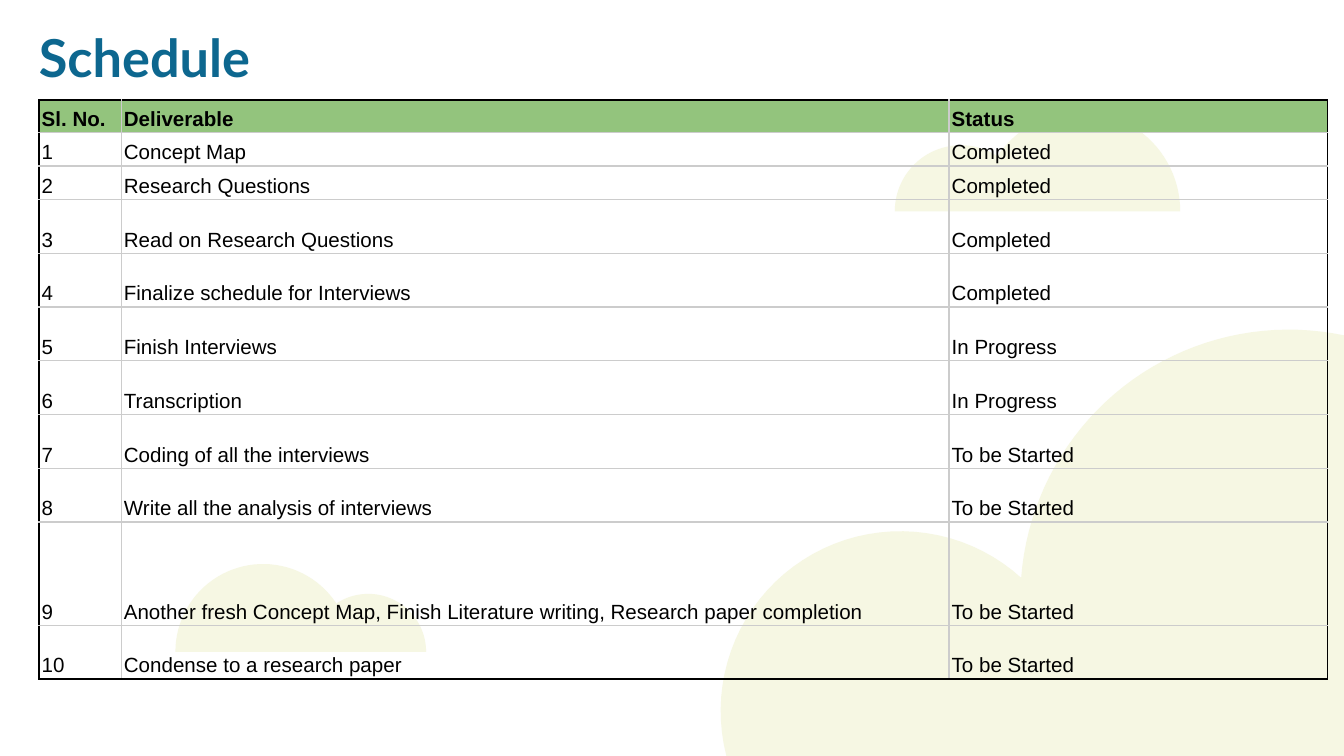
import math

import pptx
import pptx.dml.color
import pptx.enum.text
import pptx.oxml
import pptx.oxml.ns
import pptx.util

Pt = pptx.util.Pt
RGBColor = pptx.dml.color.RGBColor

BLUE = RGBColor(0x0D, 0x67, 0x8F)
GREEN = RGBColor(0x93, 0xC4, 0x7D)
CLOUD = RGBColor(0xF6, 0xF7, 0xE3)
BLACK = RGBColor(0x00, 0x00, 0x00)
GREY = RGBColor(0xCC, 0xCC, 0xCC)


def set_font(r, size, name, color, bold):
    for key, value in {"size": Pt(size), "name": name, "bold": bold}.items():
        setattr(r.font, key, value)
    r.font.color.rgb = color


def add_border(cell, side, color):
    ns = pptx.oxml.ns.nsdecls("a")
    cell._tc.get_or_add_tcPr().append(pptx.oxml.parse_xml(
        f'<a:ln{side} {ns} w="{Pt(0.75)}"><a:solidFill>'
        f'<a:srgbClr val="{color}"/></a:solidFill></a:ln{side}>'))


prs = pptx.Presentation()
prs.slide_width, prs.slide_height = Pt(720), Pt(405)
s = prs.slides.add_slide(prs.slide_layouts[6])

# Clouds: arcs (centre x, centre y, radius, start and end angle), then corners
clouds = [
    ([(514.8, 113.2, 35.4, 180, 56), (578.9, 113.2, 53.4, 146, 0)], []),
    ([(141, 349.2, 47, 180, 34), (197.3, 349.2, 31, 124, 0)], []),
    ([(482.4, 380.9, 96.3, 198, 47.7), (690.5, 320.4, 143.8, 175.7, 75.5)],
     [(726.5, 410.4)]),
]
STEPS = 40
for arcs, corners in clouds:
    points = []
    for cx, cy, radius, start, end in arcs:
        for i in range(STEPS + 1):
            a = math.radians(start + (end - start) * i / STEPS)
            points.append((cx + radius * math.cos(a), cy - radius * math.sin(a)))
    outline = [(Pt(x), Pt(y)) for x, y in points + corners]
    builder = s.shapes.build_freeform(*outline[0], scale=1.0)
    builder.add_line_segments(outline[1:], close=True)
    sp = builder.convert_to_shape()
    sp.shadow.inherit = False
    sp.fill.solid()
    sp.fill.fore_color.rgb = CLOUD
    sp.line.fill.background()

# Title
tf = s.shapes.add_textbox(Pt(20.9), Pt(13.7), Pt(429), Pt(66)).text_frame
frame_format = {
    "word_wrap": True,
    "vertical_anchor": pptx.enum.text.MSO_ANCHOR.TOP,
    "margin_left": 0, "margin_right": 0, "margin_top": 0, "margin_bottom": 0,
}
for key, value in frame_format.items():
    setattr(tf, key, value)
r = tf.paragraphs[0].add_run()
r.text = "Schedule"
set_font(r, 28, "Lato", BLUE, True)

# Schedule table
deliverables = [
    ("Concept Map", "Completed"),
    ("Research Questions", "Completed"),
    ("Read on Research Questions", "Completed"),
    ("Finalize schedule for Interviews", "Completed"),
    ("Finish Interviews", "In Progress"),
    ("Transcription", "In Progress"),
    ("Coding of all the interviews", "To be Started"),
    ("Write all the analysis of interviews", "To be Started"),
    ("Another fresh Concept Map, Finish Literature writing, "
     "Research paper completion", "To be Started"),
    ("Condense to a research paper", "To be Started"),
]
rows = [("Sl. No.", "Deliverable", "Status")]
rows += [(str(n), *item) for n, item in enumerate(deliverables, 1)]
widths = [44, 443.5, 203]
heights = [17.3, 18, 18] + [28.8] * 6 + [55.3, 28.8]

table = s.shapes.add_table(len(rows), len(widths), Pt(20.9), Pt(53.6),
                           Pt(sum(widths)), Pt(sum(heights))).table
table.first_row = table.horz_banding = False
for column, width in zip(table.columns, widths):
    column.width = Pt(width)
for row, height in zip(table.rows, heights):
    row.height = Pt(height)

cell_format = {
    "vertical_anchor": pptx.enum.text.MSO_ANCHOR.BOTTOM,
    "margin_left": Pt(1.5), "margin_right": Pt(1.5),
    "margin_top": Pt(1), "margin_bottom": Pt(1),
}
for i, texts in enumerate(rows):
    for j, text in enumerate(texts):
        cell = table.cell(i, j)
        for key, value in cell_format.items():
            setattr(cell, key, value)
        r = cell.text_frame.paragraphs[0].add_run()
        r.text = text
        set_font(r, 11, "Arial", BLACK, i == 0)

        # Black around the table, grey between the cells
        outer = {"L": j == 0, "R": j == len(widths) - 1,
                 "T": i == 0, "B": i == len(rows) - 1}
        for side, is_outer in outer.items():
            add_border(cell, side, BLACK if is_outer else GREY)

        if i == 0:
            cell.fill.solid()
            cell.fill.fore_color.rgb = GREEN
        else:
            cell.fill.background()

prs.save("out.pptx")
